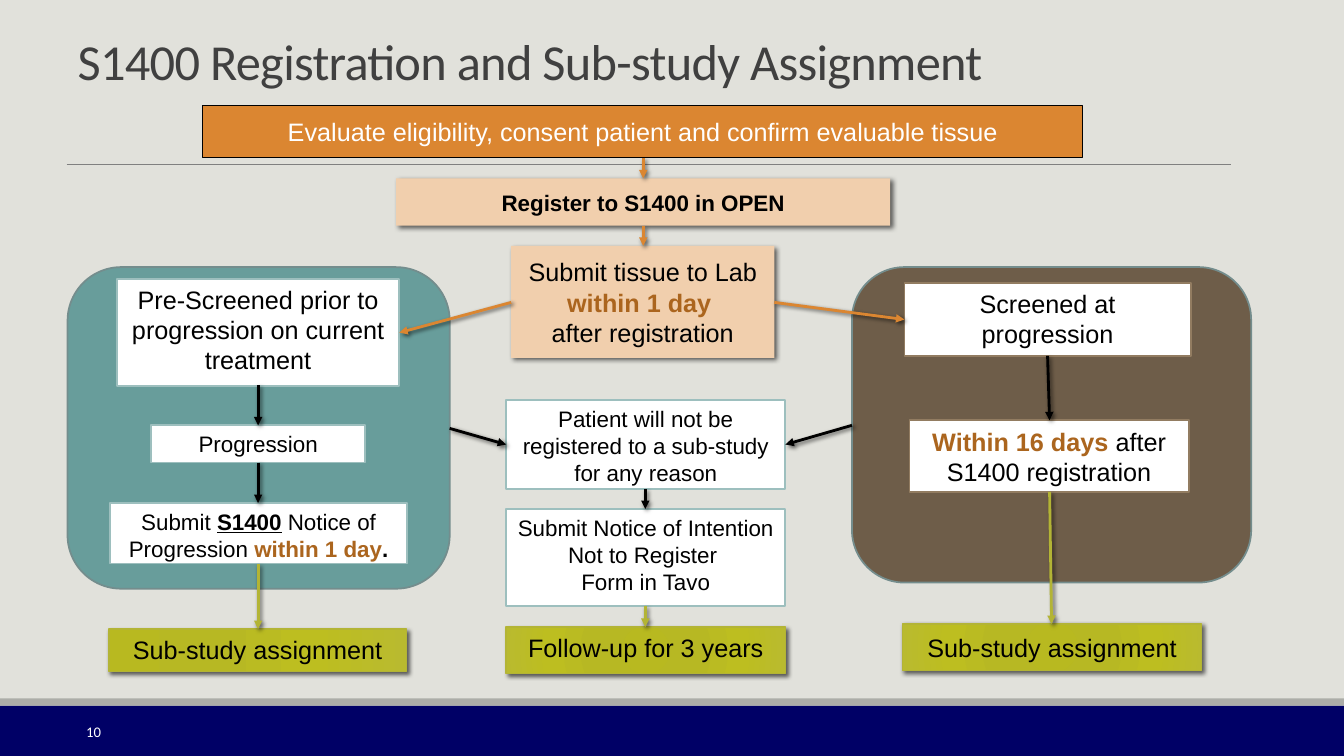
from dataclasses import dataclass
from typing import Any

import pptx
import pptx.dml.color
import pptx.enum.shapes
import pptx.enum.text
import pptx.oxml
import pptx.oxml.ns
import pptx.util

Inches = pptx.util.Inches
Pt = pptx.util.Pt
Shapes = pptx.enum.shapes.MSO_SHAPE
Anchor = pptx.enum.text.MSO_ANCHOR
Align = pptx.enum.text.PP_ALIGN

COLOURS = {
    "paper": "E1E1DB", "navy": "000066", "band": "ACADA8", "rule": "808080",
    "title": "404040", "black": "000000", "white": "FFFFFF",
    "orange": "DB8631", "peach": "F1CFAD", "accent": "AB651E",
    "teal": "689D9B", "brown": "6E5D49", "panel edge": "748D8D",
    "teal edge": "9DBFBE", "brown edge": "927C61", "green": "B3B435",
}
GREEN_STOPS = ((0, "B8B920"), (34, "B7B823"), (70, "BDBE20"), (100, "B9BA2F"))
RADIAL = '<a:path path="circle"><a:fillToRect l="100000" t="100000" r="100000" b="100000"/></a:path>'
LINEAR = '<a:lin ang="0" scaled="0"/>'
BREAK = "\n"


@dataclass(frozen=True)
class Style:
    fill: str = ""
    line: str = ""
    width: float = 1.25
    gradient: str = ""
    shadow: float = 0
    anchor: Any = Anchor.TOP
    inset: float = 0.05
    shape: Any = Shapes.RECTANGLE


@dataclass(frozen=True)
class Span:
    text: str
    colour: str = "black"
    bold: bool = False
    underline: bool = False


@dataclass(frozen=True)
class Box:
    left: float
    top: float
    width: float
    height: float
    style: Style
    spans: tuple[Span, ...] = ()
    size: float = 18


@dataclass(frozen=True)
class Arrow:
    start: tuple[float, float]
    end: tuple[float, float]
    colour: str = "black"


MIDDLE = {"anchor": Anchor.MIDDLE, "inset": 0.1}
BANNER = Style("orange", "black", 0.75, **MIDDLE)
PEACH = Style("peach", shadow=3.5, **MIDDLE)
TEAL_NOTE = Style("white", "teal edge")
BROWN_NOTE = Style("white", "brown edge")
BROWN_MIDDLE = Style("white", "brown edge", anchor=Anchor.MIDDLE)
GREEN_LINEAR = Style(line="green", width=1, gradient=LINEAR, shadow=3)
GREEN_RADIAL = Style(line="green", width=1, gradient=RADIAL, shadow=3)
GREEN_MIDDLE = Style(line="green", width=1, gradient=RADIAL, shadow=3, **MIDDLE)
BROWN_PANEL = Style("brown", "panel edge", shape=Shapes.ROUNDED_RECTANGLE)
TEAL_PANEL = Style("teal", "panel edge", shape=Shapes.ROUNDED_RECTANGLE)

BACKDROP = (
    Box(0, 7, 13.33, 0.5, Style("navy")),
    Box(0, 6.93, 13.33, 0.07, Style("band")),
)
ASSIGNMENT = (Span("Sub-study assignment"),)
FLOW = (
    Box(8.45, 2.65, 3.96, 3.13, BROWN_PANEL),
    Box(0.67, 2.65, 3.79, 3.19, TEAL_PANEL),
    Box(2.01, 1.05, 8.73, 0.51, BANNER,
        (Span("Evaluate eligibility, consent patient and confirm evaluable tissue", "white"),)),
    Box(3.93, 1.77, 4.9, 0.47, PEACH, (Span("Register to S1400 in OPEN", bold=True),), 16),
    Box(5.07, 2.44, 2.61, 1.11, PEACH,
        (Span("Submit tissue to Lab "), Span("within 1 day ", "accent", True),
         Span(BREAK), Span("after registration"))),
    Box(1.16, 2.77, 2.8, 1.06, TEAL_NOTE,
        (Span("Pre-Screened prior to progression on current treatment"),)),
    Box(1.5, 4.22, 2.12, 0.37, TEAL_NOTE, (Span("Progression"),), 16),
    Box(1.09, 4.99, 2.95, 0.6, TEAL_NOTE,
        (Span("Submit "), Span("S1400", bold=True, underline=True),
         Span(" Notice of Progression "), Span("within 1 day", "accent", True),
         Span(".", bold=True)), 16),
    Box(5.02, 3.97, 2.77, 0.88, TEAL_NOTE,
        (Span("Patient will not be registered to a sub-study for any reason"),), 16),
    Box(5.02, 5.05, 2.77, 0.96, TEAL_NOTE,
        (Span("Submit Notice of Intention Not to Register "), Span(BREAK), Span("Form in Tavo")), 16),
    Box(8.97, 2.81, 2.84, 0.72, BROWN_NOTE, (Span("Screened at progression"),)),
    Box(9.02, 4.17, 2.77, 0.71, BROWN_MIDDLE,
        (Span("Within 16 days ", "accent", True), Span("after S1400 registration"))),
    Box(1.08, 6.24, 2.95, 0.42, GREEN_LINEAR, ASSIGNMENT),
    Box(5.02, 6.22, 2.77, 0.46, GREEN_RADIAL, (Span("Follow-up for 3 years"),)),
    Box(8.95, 6.19, 2.97, 0.46, GREEN_MIDDLE, ASSIGNMENT),
)
ARROWS = (
    Arrow((6.38, 1.57), (6.38, 1.77), "orange"),
    Arrow((6.38, 2.24), (6.38, 2.44), "orange"),
    Arrow((5.07, 3), (3.96, 3.3), "orange"),
    Arrow((7.68, 3), (8.97, 3.17), "orange"),
    Arrow((2.56, 3.82), (2.56, 4.22)),
    Arrow((2.56, 4.59), (2.56, 4.99)),
    Arrow((2.56, 5.6), (2.56, 6.24), "green"),
    Arrow((4.46, 4.25), (5.02, 4.41)),
    Arrow((8.45, 4.22), (7.79, 4.41)),
    Arrow((6.4, 4.85), (6.4, 5.05)),
    Arrow((6.4, 6.01), (6.4, 6.22), "green"),
    Arrow((10.39, 3.53), (10.41, 4.17)),
    Arrow((10.41, 4.88), (10.43, 6.19), "green"),
)


def rgb(name: str) -> Any:
    return pptx.dml.color.RGBColor.from_string(COLOURS[name])


def apply(target: Any, formats: dict[str, Any]) -> None:
    for name, value in formats.items():
        setattr(target, name, value)


def element(tag: str, attributes: str = "", inner: str = "") -> Any:
    namespace = pptx.oxml.ns.nsdecls("a")
    return pptx.oxml.parse_xml(f"<a:{tag} {namespace} {attributes}>{inner}</a:{tag}>")


def effects(blur: float) -> Any:
    shadow = (f'<a:outerShdw blurRad="{Pt(blur)}" dist="{Pt(2)}" dir="2700000" algn="tl" rotWithShape="0">'
              '<a:srgbClr val="000000"><a:alpha val="60000"/></a:srgbClr></a:outerShdw>')
    return element("effectLst", inner=shadow if blur else "")


def write(para: Any, spans: tuple[Span, ...], size: float, family: str = "Arial") -> None:
    for span in spans:
        if span.text == BREAK:
            para.add_line_break()
            continue
        run = para.add_run()
        run.text = span.text
        apply(run.font, {"name": family, "size": Pt(size), "bold": span.bold, "underline": span.underline})
        run.font.color.rgb = rgb(span.colour)


def draw_box(page: Any, box: Box) -> None:
    style = box.style
    shape = page.shapes.add_shape(style.shape, *map(Inches, (box.left, box.top, box.width, box.height)))
    properties = shape.fill._xPr
    if style.gradient:
        stops = "".join(f'<a:gs pos="{place * 1000}"><a:srgbClr val="{colour}"/></a:gs>'
                        for place, colour in GREEN_STOPS)
        properties.append(element("gradFill", 'rotWithShape="1"', f"<a:gsLst>{stops}</a:gsLst>{style.gradient}"))
    else:
        shape.fill.solid()
        shape.fill.fore_color.rgb = rgb(style.fill)
    if style.line:
        shape.line.color.rgb = rgb(style.line)
        shape.line.width = Pt(style.width)
    else:
        shape.line.fill.background()
    properties.append(effects(style.shadow))
    if box.spans:
        frame = shape.text_frame
        apply(frame, {"word_wrap": True, "vertical_anchor": style.anchor,
                      "margin_top": Inches(style.inset), "margin_bottom": Inches(style.inset)})
        para = frame.paragraphs[0]
        para.alignment = Align.CENTER
        write(para, box.spans, box.size)


def draw_line(page: Any, arrow: Arrow, width: float, head: bool) -> None:
    line = page.shapes.add_connector(pptx.enum.shapes.MSO_CONNECTOR.STRAIGHT,
                                     *map(Inches, arrow.start + arrow.end))
    line.line.color.rgb = rgb(arrow.colour)
    line.line.width = Pt(width)
    if head:
        line.line._get_or_add_ln().append(element("tailEnd", 'type="triangle"'))
    line._element.spPr.append(effects(3 if head else 0))


def draw_title(page: Any) -> None:
    title = page.shapes.title
    apply(title, {"left": Inches(0.67), "top": Inches(0.21), "width": Inches(12.25), "height": Inches(0.74)})
    apply(title.text_frame, {"vertical_anchor": Anchor.BOTTOM, "word_wrap": True,
                             "auto_size": pptx.enum.text.MSO_AUTO_SIZE.NONE})
    para = title.text_frame.paragraphs[0]
    apply(para, {"alignment": Align.LEFT, "line_spacing": 0.85})
    write(para, (Span("S1400 Registration and Sub-study Assignment", "title"),), 36, "Calibri")
    para.runs[0].font._element.set("spc", "-50")


def draw_number(page: Any) -> None:
    number = page.shapes.add_textbox(*map(Inches, (0.07, 7.06, 1.03, 0.4)))
    apply(number.text_frame, {"word_wrap": True, "vertical_anchor": Anchor.MIDDLE})
    para = number.text_frame.paragraphs[0]
    para.alignment = Align.RIGHT
    write(para, (Span("10", "white"),), 10.5, "Calibri")


def main() -> None:
    deck = pptx.Presentation()
    apply(deck, {"slide_width": Inches(13.33), "slide_height": Inches(7.5)})
    page = deck.slides.add_slide(deck.slide_layouts[5])
    page.background.fill.solid()
    page.background.fill.fore_color.rgb = rgb("paper")
    draw_title(page)
    for box in BACKDROP:
        draw_box(page, box)
    draw_line(page, Arrow((0.66, 1.63), (12.21, 1.63), "rule"), 0.5, False)
    for box in FLOW:
        draw_box(page, box)
    for arrow in ARROWS:
        draw_line(page, arrow, 2, True)
    draw_number(page)
    deck.save("out.pptx")


if __name__ == "__main__":
    main()
